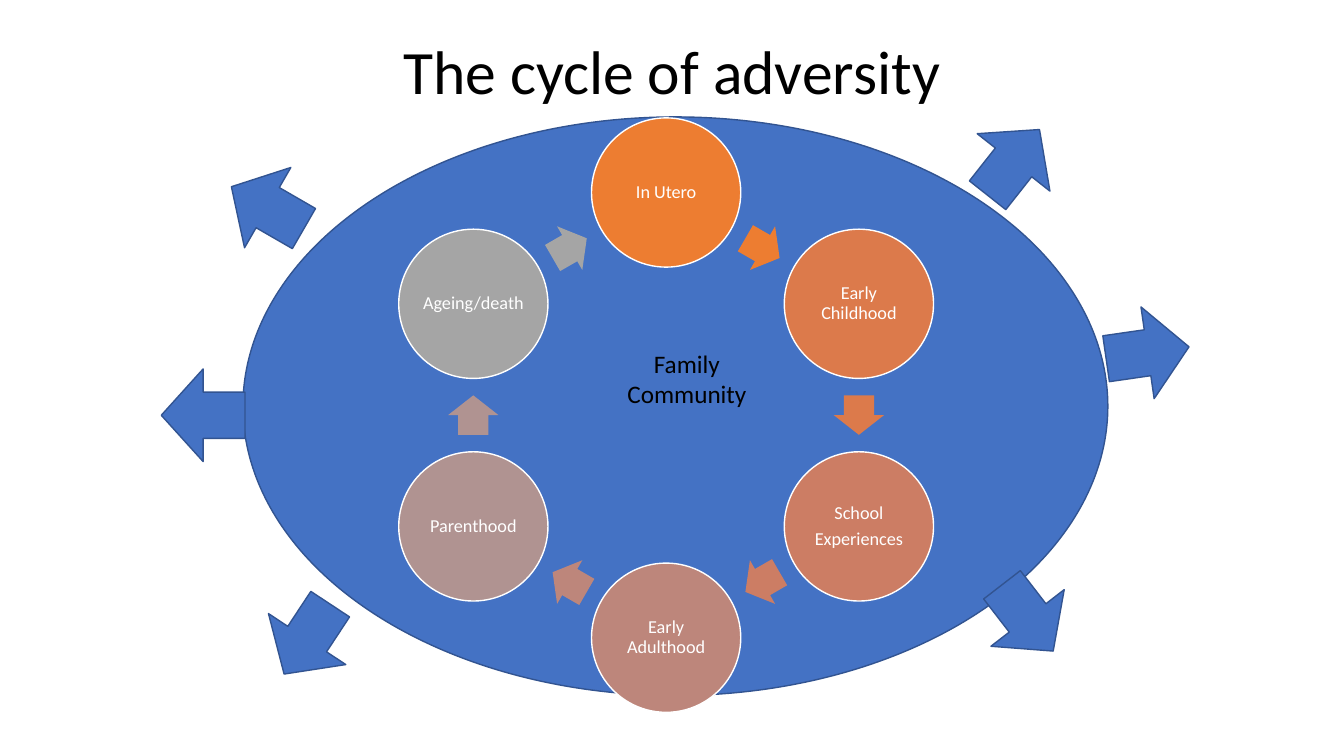
import math

from pptx import Presentation
from pptx.dml import color
from pptx.enum import shapes, text
from pptx.util import Pt

BLUE = "4472C4"
NAVY = "325491"
WHITE = "FFFFFF"
BLACK = "000000"

RING_X, RING_Y, RING_RADIUS = 475.8, 296.5, 159
STAGE_SIZE = 106.6

STAGES = [
    (["In Utero"], "ED7D31"),
    (["Early Childhood"], "DC7A4B"),
    (["School", "Experiences"], "CC7D64"),
    (["Early Adulthood"], "BD867B"),
    (["Parenthood"], "B09391"),
    (["Ageing/death"], "A5A5A5"),
]

OUTWARD_ARROWS = [
    (724, 116, 308.3),
    (819.7, 252, 351.8),
    (734, 441.4, 52.3),
    (191.2, 148.3, 210),
    (145.1, 296.6, 180),
    (219.4, 456.5, 123.4),
]


def rgb(value):
    return color.RGBColor.from_string(value)


def add_centred_shape(slide, kind, x, y, width, height, fill, line=None, rotation=0):
    shape = slide.shapes.add_shape(
        kind, Pt(x - width / 2), Pt(y - height / 2), Pt(width), Pt(height))
    shape.shadow.inherit = False
    shape.rotation = rotation
    shape.fill.solid()
    shape.fill.fore_color.rgb = rgb(fill)
    if line:
        shape.line.color.rgb = rgb(line)
        shape.line.width = Pt(1)
    else:
        shape.line.fill.background()
    return shape


def write_lines(frame, lines, size, text_color, line_spacing=1.0, space_after=0):
    frame.word_wrap = True
    for index, line in enumerate(lines):
        paragraph = frame.paragraphs[0] if index == 0 else frame.add_paragraph()
        paragraph.alignment = text.PP_ALIGN.CENTER
        paragraph.line_spacing = line_spacing
        paragraph.space_after = Pt(space_after)
        run = paragraph.add_run()
        run.text = line
        run.font.name = "Calibri"
        run.font.size = Pt(size)
        run.font.color.rgb = rgb(text_color)


def add_label(slide, left, top, width, height, lines, size, anchor, line_spacing=1.0):
    box = slide.shapes.add_textbox(Pt(left), Pt(top), Pt(width), Pt(height))
    box.text_frame.vertical_anchor = anchor
    write_lines(box.text_frame, lines, size, BLACK, line_spacing)


def ring_point(degrees, radius):
    angle = math.radians(degrees)
    return RING_X + radius * math.sin(angle), RING_Y - radius * math.cos(angle)


def add_stage(slide, lines, fill, degrees):
    x, y = ring_point(degrees, RING_RADIUS)
    circle = add_centred_shape(
        slide, shapes.MSO_SHAPE.OVAL, x, y, STAGE_SIZE, STAGE_SIZE, fill, WHITE)
    frame = circle.text_frame
    frame.margin_left = frame.margin_right = Pt(1.4)
    frame.margin_top = frame.margin_bottom = Pt(1.4)
    frame.vertical_anchor = text.MSO_ANCHOR.MIDDLE
    write_lines(frame, lines, 13, WHITE, 0.9, 4.5)


def add_step_arrow(slide, fill, degrees, step):
    middle = degrees + step / 2
    x, y = ring_point(middle, RING_RADIUS * math.cos(math.radians(step / 2)))
    arrow = add_centred_shape(
        slide, shapes.MSO_SHAPE.RIGHT_ARROW, x, y, 28.2, 36, fill, rotation=middle)
    arrow.adjustments[0] = 0.6
    arrow.adjustments[1] = 0.5


def main():
    presentation = Presentation()
    presentation.slide_width = Pt(960)
    presentation.slide_height = Pt(540)
    slide = presentation.slides.add_slide(presentation.slide_layouts[6])

    add_centred_shape(
        slide, shapes.MSO_SHAPE.OVAL, 482.4, 290.2, 617.8, 413.3, BLUE, NAVY)

    step = 360 / len(STAGES)
    for index, (lines, fill) in enumerate(STAGES):
        add_stage(slide, lines, fill, index * step)
        add_step_arrow(slide, fill, index * step, step)

    add_label(slide, 425.5, 245, 130.3, 51, ["Family", "Community"], 18,
              text.MSO_ANCHOR.TOP)
    add_label(slide, 66, 0.7, 828, 104.4, ["The cycle of adversity"], 44,
              text.MSO_ANCHOR.MIDDLE, 0.9)

    for x, y, rotation in OUTWARD_ARROWS:
        add_centred_shape(slide, shapes.MSO_SHAPE.RIGHT_ARROW, x, y, 59.8, 66.2,
                          BLUE, NAVY, rotation)

    presentation.save("out.pptx")


if __name__ == "__main__":
    main()
